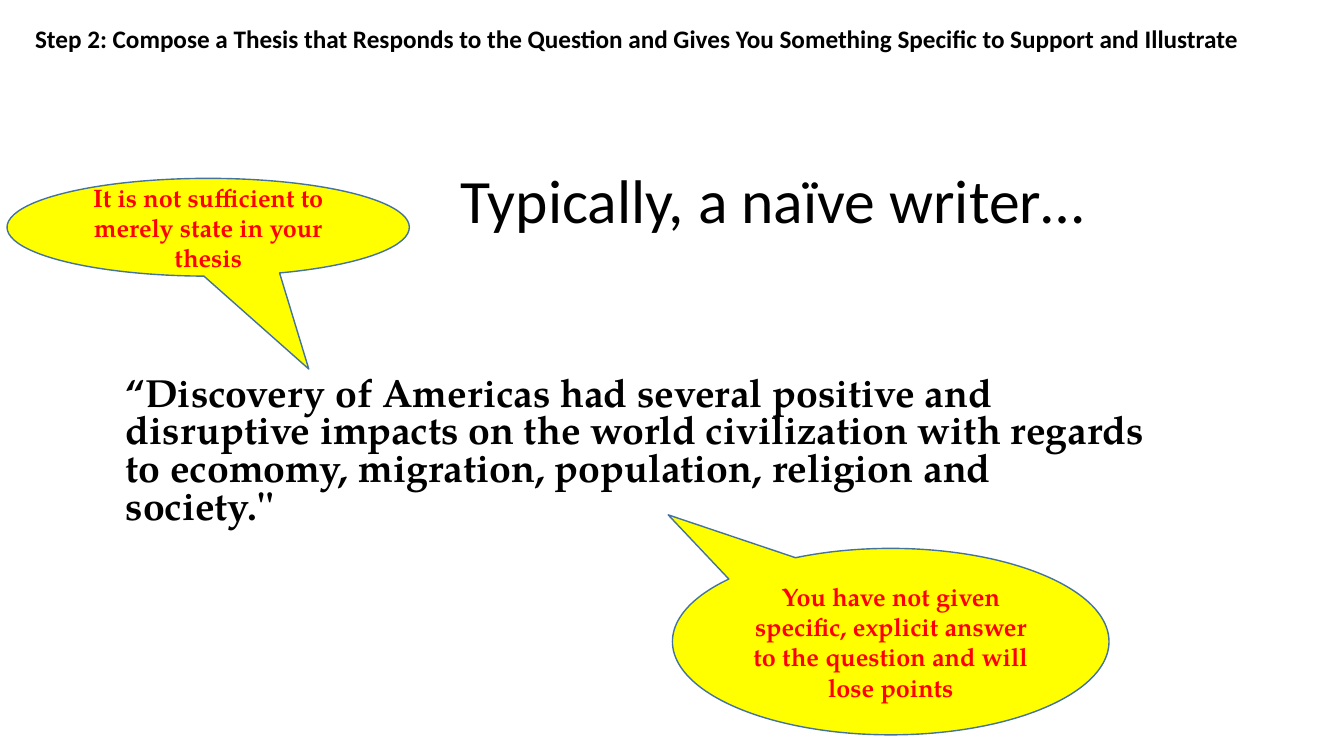
from pptx import Presentation
from pptx.dml.color import RGBColor
from pptx.enum.shapes import MSO_SHAPE
from pptx.enum.text import MSO_ANCHOR, PP_ALIGN
from pptx.util import Inches, Pt

BLACK = RGBColor(0x00, 0x00, 0x00)
RED = RGBColor(0xFF, 0x00, 0x00)
YELLOW = RGBColor(0xFF, 0xFF, 0x00)
BLUE = RGBColor(0x43, 0x73, 0x9E)
SANS = "Calibri"
SERIF = "TeX Gyre Pagella"


def write(sp, text, size, font, color=BLACK, bold=True, spacing=1.0, anchor=MSO_ANCHOR.TOP):
    tf = sp.text_frame
    tf.word_wrap = True
    tf.vertical_anchor = anchor
    tf.text = text
    p = tf.paragraphs[0]
    p.line_spacing = spacing
    r = p.runs[0]
    r.font.name = font
    r.font.size = Pt(size)
    r.font.bold = bold
    r.font.color.rgb = color
    return p


prs = Presentation()
prs.slide_width = Inches(13.33)
prs.slide_height = Inches(7.5)
s = prs.slides.add_slide(prs.slide_layouts[6])

title = s.shapes.add_textbox(Inches(4.47), Inches(1.29), Inches(8.57), Inches(1.45))
write(title, "Typically, a naïve writer…", 44, SANS, bold=False, spacing=0.9,
      anchor=MSO_ANCHOR.MIDDLE)

thesis = s.shapes.add_textbox(Inches(1.15), Inches(3.69), Inches(10.3), Inches(1.61))
write(thesis, "“Discovery of Americas had several positive and disruptive impacts on the world "
      "civilization with regards to ecomomy, migration, population, religion and society.\"",
      28, SERIF, spacing=0.8)

# Left, top, width, height, pointer offset from the centre, text
callouts = [
    (0.07, 1.77, 3.99, 0.97, (0.25, 1.45),
     "It is not sufficient to merely state in your thesis"),
    (6.67, 5.44, 4.33, 1.85, (-0.51, -0.68),
     "You have not given specific, explicit answer to the question and will lose points"),
]
for left, top, width, height, pointer, text in callouts:
    sp = s.shapes.add_shape(MSO_SHAPE.OVAL_CALLOUT, Inches(left), Inches(top),
                            Inches(width), Inches(height))
    sp.adjustments[0], sp.adjustments[1] = pointer
    sp.shadow.inherit = False
    sp.fill.solid()
    sp.fill.fore_color.rgb = YELLOW
    sp.line.color.rgb = BLUE
    sp.line.width = Pt(1)
    p = write(sp, text, 18, SERIF, RED, anchor=MSO_ANCHOR.MIDDLE)
    p.alignment = PP_ALIGN.CENTER

step = s.shapes.add_textbox(Inches(0.25), Inches(0.18), Inches(12.63), Inches(0.4))
write(step, "Step 2: Compose a Thesis that Responds to the Question and Gives You "
      "Something Specific to Support and Illustrate", 18, SANS)

prs.save("out.pptx")
